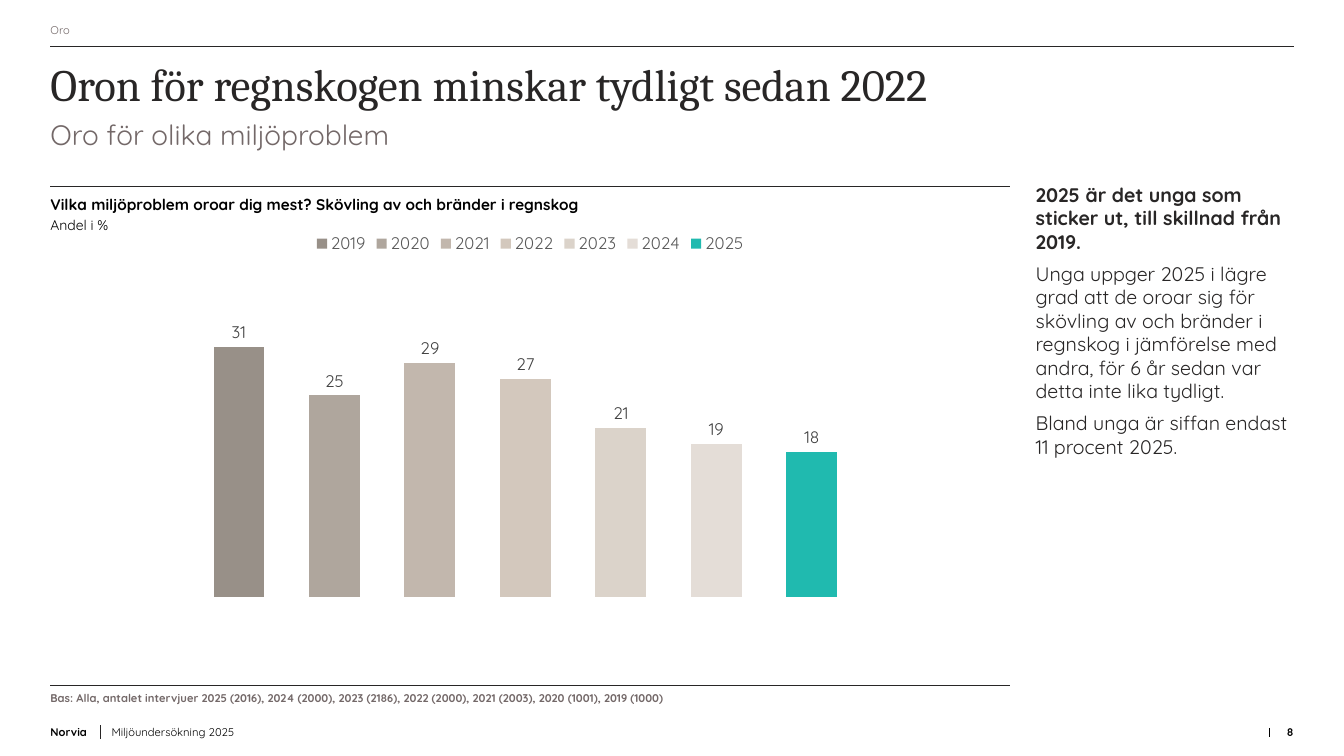
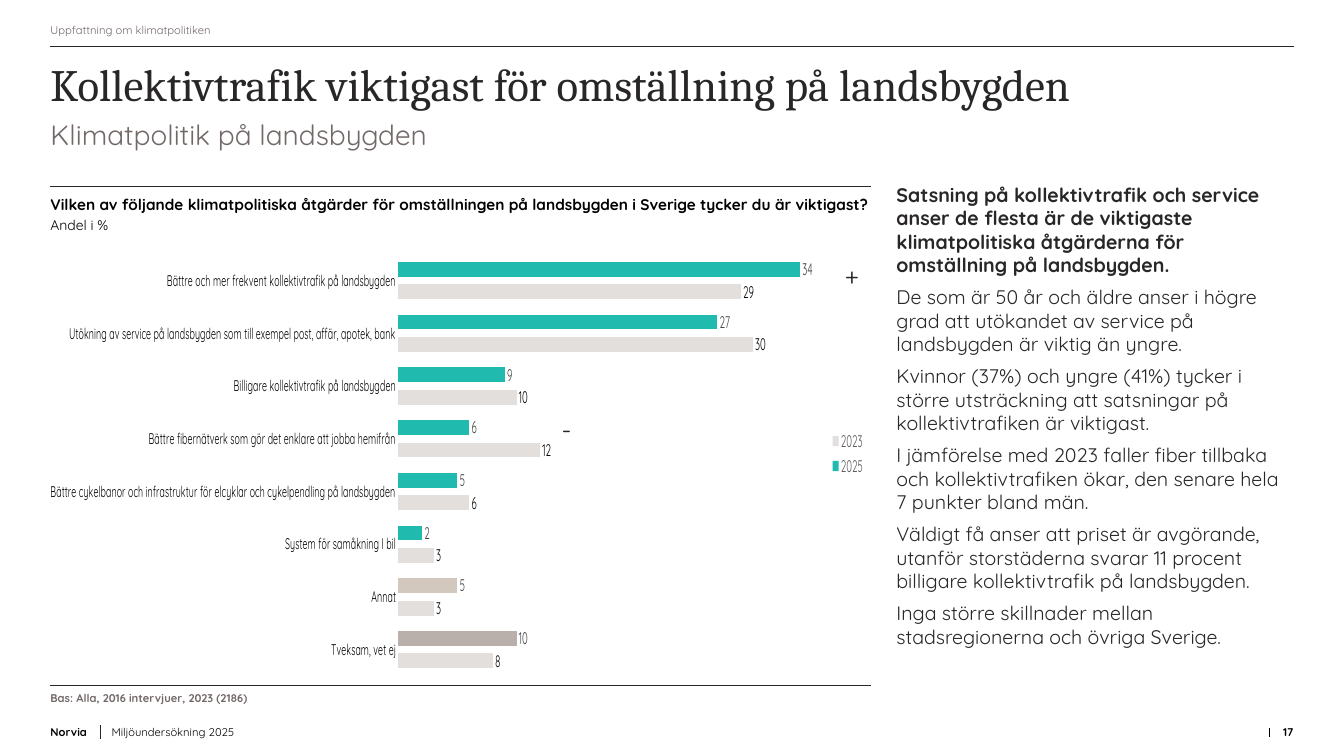
from lxml import etree
from pptx import Presentation
from pptx.chart.data import CategoryChartData
from pptx.dml.color import RGBColor
from pptx.enum.chart import XL_CHART_TYPE, XL_LABEL_POSITION, XL_LEGEND_POSITION, XL_TICK_MARK
from pptx.enum.shapes import MSO_CONNECTOR
from pptx.enum.text import MSO_ANCHOR, PP_ALIGN
from pptx.oxml.ns import qn
from pptx.util import Inches, Pt

COLUMNS, BARS = XL_CHART_TYPE.COLUMN_CLUSTERED, XL_CHART_TYPE.BAR_CLUSTERED
LEGEND_TOP, LEGEND_RIGHT = XL_LEGEND_POSITION.TOP, XL_LEGEND_POSITION.RIGHT
OUTSIDE_END, NO_TICK = XL_LABEL_POSITION.OUTSIDE_END, XL_TICK_MARK.NONE
TOP, MIDDLE, BOTTOM = MSO_ANCHOR.TOP, MSO_ANCHOR.MIDDLE, MSO_ANCHOR.BOTTOM
RIGHT_ALIGNED = PP_ALIGN.RIGHT
STRAIGHT = MSO_CONNECTOR.STRAIGHT

COLORS = {
    "ink": "282626", "black": "000000", "muted": "736868", "label": "404040",
    "legend": "595959", "teal": "20BAAF", "sand": "D3C8BD", "taupe": "BAB0AB",
    "mist": "E3DFDD",
}
YEAR_COLORS = ["989088", "AFA69D", "C2B7AD", "D3C8BD", "DBD3CA", "E4DDD7", COLORS["teal"]]
BODY_FONT, TITLE_FONT = "Quicksand", "Cambria"

STYLES = {
    "section": {"size": 8, "color": "muted", "anchor": MIDDLE},
    "title": {"size": 32, "color": "ink", "font": TITLE_FONT, "inset": 0.1},
    "subtitle": {"size": 20, "color": "muted"},
    "question": {"size": 11, "color": "black", "bold": True},
    "unit": {"size": 10, "color": "black"},
    "base": {"size": 8, "color": "muted", "bold": True},
    "sender": {"size": 8, "color": "black", "bold": True, "anchor": BOTTOM},
    "report": {"size": 8, "color": "black", "anchor": BOTTOM},
    "page": {"size": 8, "color": "black", "bold": True, "anchor": BOTTOM, "align": RIGHT_ALIGNED},
    "comment": {"size": 14, "color": "ink", "bold_first": True, "after": 6},
    "change": {"size": 18, "color": "ink", "wrap": False},
}

prs = Presentation()
prs.slide_width, prs.slide_height = Inches(13.33), Inches(7.5)
X, Y = prs.slide_width / 100, prs.slide_height / 100
LEFT, RIGHT, GUTTER = 3.75, 96.25, 1.9
WIDTH = RIGHT - LEFT
CHART_TOP, CHART_BOTTOM = 29.33, 90.67


def add_text(slide, left, top, width, height, paragraphs, style):
    look = STYLES[style]
    frame = slide.shapes.add_textbox(
        int(left * X), int(top * Y), int(width * X), int(height * Y)).text_frame
    frame.word_wrap = look.get("wrap", True)
    frame.vertical_anchor = look.get("anchor", TOP)
    frame.margin_left = frame.margin_right = frame.margin_bottom = 0
    frame.margin_top = Inches(look.get("inset", 0))
    for number, words in enumerate(paragraphs):
        paragraph = frame.paragraphs[0] if number == 0 else frame.add_paragraph()
        paragraph.alignment = look.get("align")
        paragraph.space_after = Pt(look.get("after", 0))
        run = paragraph.add_run()
        run.text = words
        bold = look.get("bold", False) or (look.get("bold_first", False) and number == 0)
        values = {"name": look.get("font", BODY_FONT), "size": Pt(look["size"]), "bold": bold}
        for attribute, value in values.items():
            setattr(run.font, attribute, value)
        run.font.color.rgb = RGBColor.from_string(COLORS[look["color"]])


def style_font(font, size, color):
    font.name, font.size = BODY_FONT, Pt(size)
    font.color.rgb = RGBColor.from_string(COLORS[color])


pages = [
    {
        "number": "8",
        "section": "Oro",
        "title": "Oron för regnskogen minskar tydligt sedan 2022",
        "subtitle": "Oro för olika miljöproblem",
        "question": "Vilka miljöproblem oroar dig mest? Skövling av och bränder i regnskog",
        "base": "Bas: Alla, antalet intervjuer 2025 (2016), 2024 (2000), 2023 (2186), "
                "2022 (2000), 2021 (2003), 2020 (1001), 2019 (1000)",
        "comments": [
            "2025 är det unga som sticker ut, till skillnad från 2019.",
            "Unga uppger 2025 i lägre grad att de oroar sig för skövling av och bränder "
            "i regnskog i jämförelse med andra, för 6 år sedan var detta inte lika tydligt.",
            "Bland unga är siffan endast 11 procent 2025.",
        ],
        "changes": [],
        "chart_right": 75.15,
        "chart": {
            "type": COLUMNS, "legend": LEGEND_TOP, "gap": 0, "overlap": -88, "max": 35,
            "plot": {"x": 0.17, "y": 0.2, "w": 0.65, "h": 0.61},
            "categories": ["1"], "category_labels": False,
            "series": [
                {"name": str(2019 + i), "values": [share], "color": YEAR_COLORS[i], "label": "label"}
                for i, share in enumerate([31, 25, 29, 27, 21, 19, 18])
            ],
        },
    },
    {
        "number": "17",
        "section": "Uppfattning om klimatpolitiken",
        "title": "Kollektivtrafik viktigast för omställning på landsbygden",
        "subtitle": "Klimatpolitik på landsbygden",
        "question": "Vilken av följande klimatpolitiska åtgärder för omställningen på "
                    "landsbygden i Sverige tycker du är viktigast?",
        "base": "Bas: Alla, 2016 intervjuer, 2023 (2186)",
        "comments": [
            "Satsning på kollektivtrafik och service anser de flesta är de viktigaste "
            "klimatpolitiska åtgärderna för omställning på landsbygden.",
            "De som är 50 år och äldre anser i högre grad att utökandet av service på "
            "landsbygden är viktig än yngre.",
            "Kvinnor (37%) och yngre (41%) tycker i större utsträckning att satsningar "
            "på kollektivtrafiken är viktigast.",
            "I jämförelse med 2023 faller fiber tillbaka och kollektivtrafiken ökar, "
            "den senare hela 7 punkter bland män.",
            "Väldigt få anser att priset är avgörande, utanför storstäderna svarar "
            "11 procent billigare kollektivtrafik på landsbygden.",
            "Inga större skillnader mellan stadsregionerna och övriga Sverige.",
        ],
        "changes": [("+", 62.87, 34.27), ("-", 41.79, 54.67)],
        "chart_right": 64.8,
        "chart": {
            "type": BARS, "legend": LEGEND_RIGHT, "gap": 104, "overlap": -52, "max": 40,
            "plot": {"x": 0, "y": 0.07, "w": 1, "h": 0.91},
            "categories": [
                "Bättre och mer frekvent kollektivtrafik på landsbygden",
                "Utökning av service på landsbygden som till exempel post, affär, apotek, bank",
                "Billigare kollektivtrafik på landsbygden",
                "Bättre fibernätverk som gör det enklare att jobba hemifrån",
                "Bättre cykelbanor och infrastruktur för elcyklar och cykelpendling på landsbygden",
                "System för samåkning I bil",
                "Annat",
                "Tveksam, vet ej",
            ],
            "category_labels": True,
            "series": [
                {"name": "2025", "values": [34, 27, 9, 6, 5, 2, 5, 10], "color": COLORS["teal"],
                 "points": {6: "sand", 7: "taupe"}, "label": "label"},
                {"name": "2023", "values": [29, 30, 10, 12, 6, 3, 3, 8], "color": COLORS["mist"],
                 "label": "black"},
            ],
        },
    },
]

for page in pages:
    slide = prs.slides.add_slide(prs.slide_layouts[6])
    chart_right = page["chart_right"]
    chart_width = chart_right - LEFT
    comment_left = chart_right + GUTTER

    rules = [
        (7.5, 97.73, 7.5, 95.87, "ink"),
        (94.45, 96.27, 94.45, 97.47, "black"),
        (LEFT, 6.13, RIGHT, 6.13, "ink"),
        (LEFT, 24.67, chart_right, 24.67, "ink"),
        (LEFT, CHART_BOTTOM, chart_right, CHART_BOTTOM, "ink"),
    ]
    for x1, y1, x2, y2, color in rules:
        rule = slide.shapes.add_connector(
            STRAIGHT, int(x1 * X), int(y1 * Y), int(x2 * X), int(y2 * Y))
        rule.line.width = Pt(0.5)
        rule.line.color.rgb = RGBColor.from_string(COLORS[color])
        etree.SubElement(rule._element.spPr, qn("a:effectLst"))

    survey = page["chart"]
    data = CategoryChartData(number_format="0")
    data.categories = survey["categories"]
    for entry in survey["series"]:
        data.add_series(entry["name"], entry["values"])
    chart = slide.shapes.add_chart(
        survey["type"], int(LEFT * X), int(CHART_TOP * Y), int(chart_width * X),
        int((CHART_BOTTOM - CHART_TOP) * Y), data).chart
    chart.has_title = False
    style_font(chart.font, 12, "black")
    chart.has_legend = True
    chart.legend.position = survey["legend"]
    chart.legend.include_in_layout = False
    style_font(chart.legend.font, 12, "legend")

    scale = chart.value_axis
    scale.minimum_scale, scale.maximum_scale = 0, survey["max"]
    scale.has_major_gridlines = scale.visible = False
    answers = chart.category_axis
    answers.visible = survey["category_labels"]
    if answers.visible:
        answers.reverse_order = True
        answers.major_tick_mark = answers.minor_tick_mark = NO_TICK
        answers.format.line.fill.background()
        style_font(answers.tick_labels.font, 11, "black")

    plot = chart.plots[0]
    plot.vary_by_categories = False
    plot.gap_width, plot.overlap = survey["gap"], survey["overlap"]
    for series, entry in zip(plot.series, survey["series"]):
        series.invert_if_negative = False
        series.format.fill.solid()
        series.format.fill.fore_color.rgb = RGBColor.from_string(entry["color"])
        for index, color in entry.get("points", {}).items():
            fill = series.points[index].format.fill
            fill.solid()
            fill.fore_color.rgb = RGBColor.from_string(COLORS[color])
        labels = series.data_labels
        labels.show_value, labels.position = True, OUTSIDE_END
        style_font(labels.font, 12, entry["label"])

    plot_area = chart._chartSpace.chart.plotArea
    for automatic in plot_area.findall(qn("c:layout")):
        plot_area.remove(automatic)
    layout = etree.Element(qn("c:layout"))
    plot_area.insert(0, layout)
    manual = etree.SubElement(layout, qn("c:manualLayout"))
    placement = {"layoutTarget": "inner", "xMode": "edge", "yMode": "edge", **survey["plot"]}
    for tag, value in placement.items():
        etree.SubElement(manual, qn(f"c:{tag}")).set("val", str(value))

    texts = [
        (LEFT, 2.53, WIDTH, 2.8, [page["section"]], "section"),
        (LEFT, 6.13, WIDTH, 9.47, [page["title"]], "title"),
        (LEFT, 15.55, WIDTH, 6.13, [page["subtitle"]], "subtitle"),
        (LEFT, 25.8, chart_width, 2.8, [page["question"]], "question"),
        (LEFT, 28.6, 38.86, 2, ["Andel i %"], "unit"),
        (LEFT, 91.47, 61.05, 2, [page["base"]], "base"),
        (LEFT, 95.47, 3.75, 2.27, ["Norvia"], "sender"),
        (8.3, 95.47, 58.5, 2.27, ["Miljöundersökning 2025"], "report"),
        (94.45, 95.47, 1.8, 2.27, [page["number"]], "page"),
        (comment_left, 24.13, RIGHT - comment_left, 69.33, page["comments"], "comment"),
    ]
    for sign, left, top in page["changes"]:
        texts.append((left, top, 1.43, 3.73, [sign], "change"))
    for placed_text in texts:
        add_text(slide, *placed_text)

prs.save("out.pptx")
